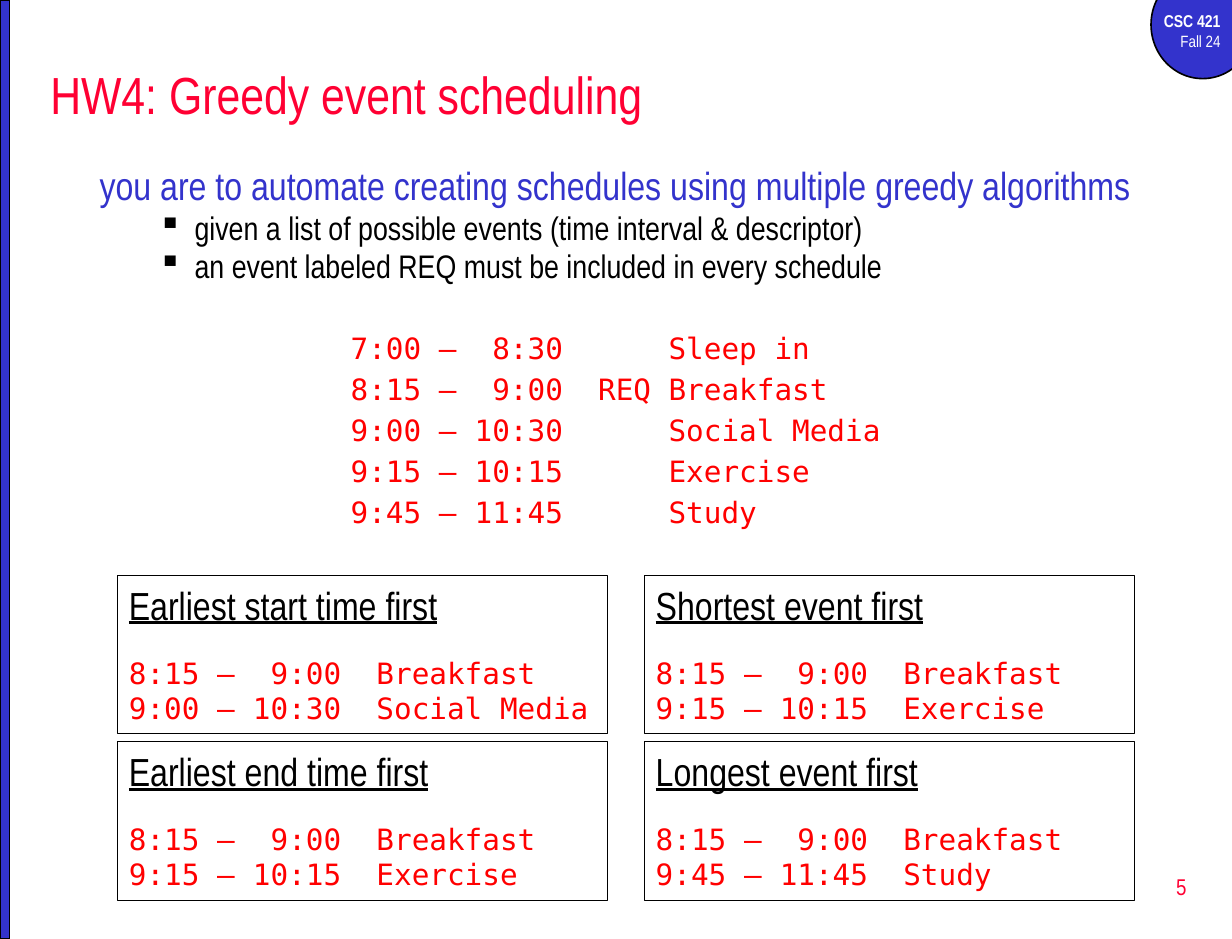
from lxml.etree import SubElement
from pptx import Presentation
from pptx.dml.color import RGBColor
from pptx.enum.shapes import MSO_SHAPE
from pptx.enum.text import MSO_ANCHOR, PP_ALIGN
from pptx.oxml.ns import qn
from pptx.util import Pt

PX = 9144  # 100 px to the inch
SANS, MONO = "Arial Narrow", "DejaVu Sans Mono"
BLUE, CRIMSON, RED, BLACK, WHITE = "3333CC", "FF0033", "FF0000", "000000", "FFFFFF"

# Tab stops that line up the columns of an event row
END, REQ, NAME = (181, "r"), (211, "l"), (271, "l")

EVENTS = [
    "7:00 –\t8:30\t\tSleep in",
    "8:15 –\t9:00\tREQ\tBreakfast",
    "9:00 –\t10:30\t\tSocial Media",
    "9:15 –\t10:15\t\tExercise",
    "9:45 –\t11:45\t\tStudy",
]
BREAKFAST = "8:15 –\t9:00\tBreakfast"
STRATEGIES = [
    ("Earliest start time first", "9:00 –\t10:30\tSocial Media"),
    ("Shortest event first", "9:15 –\t10:15\tExercise"),
    ("Earliest end time first", "9:15 –\t10:15\tExercise"),
    ("Longest event first", "9:45 –\t11:45\tStudy"),
]


def rgb(color):
    return RGBColor.from_string(color)


class Deck:
    def __init__(self, width, height):
        self.prs = Presentation()
        self.prs.slide_width, self.prs.slide_height = width * PX, height * PX
        self.s = self.prs.slides.add_slide(self.prs.slide_layouts[6])

    def shape(self, kind, x, y, w, h, fill=None, line=1):
        sp = self.s.shapes.add_shape(kind, x * PX, y * PX, w * PX, h * PX)
        sp.shadow.inherit = False
        if fill:
            sp.fill.solid()
            sp.fill.fore_color.rgb = rgb(fill)
        else:
            sp.fill.background()
        sp.line.color.rgb = rgb(BLACK)
        sp.line.width = Pt(line)
        return self.frame(sp, MSO_ANCHOR.TOP)

    def box(self, x, y, w, h, anchor=MSO_ANCHOR.TOP):
        sp = self.s.shapes.add_textbox(x * PX, y * PX, w * PX, h * PX)
        return self.frame(sp, anchor)

    def frame(self, sp, anchor):
        tf = sp.text_frame
        tf.word_wrap = True
        tf.vertical_anchor = anchor
        return tf

    def para(self, tf, text, size, color, font=SANS, bold=False, underline=False,
             align=PP_ALIGN.LEFT, before=0, spacing=1.0):
        """Fill the empty first paragraph, or add one after the last."""
        p = tf.paragraphs[0]
        if p.runs:
            p = tf.add_paragraph()
        p.alignment = align
        p.space_before = Pt(before)
        p.line_spacing = spacing
        r = p.add_run()
        r.text = text
        r.font.name, r.font.size = font, Pt(size)
        r.font.bold, r.font.underline = bold, underline
        r.font.color.rgb = rgb(color)
        return p

    def bullet(self, tf, text):
        p = self.para(tf, text, 20, BLACK, before=4, spacing=0.8)
        pPr = p._p.get_or_add_pPr()
        pPr.set("marL", str(81 * PX))
        pPr.set("indent", str(-31 * PX))
        SubElement(pPr, qn("a:buChar"), char="▪")

    def event(self, tf, text, stops, before=0):
        p = self.para(tf, text, 18, RED, MONO, before=before)
        tabs = SubElement(p._p.get_or_add_pPr(), qn("a:tabLst"))
        for pos, side in stops:
            SubElement(tabs, qn("a:tab"), pos=str(pos * PX), algn=side)

    def strategy(self, x, y, title, second):
        tf = self.shape(MSO_SHAPE.RECTANGLE, x, y, 418, 135, line=0.75)
        self.para(tf, title, 24, BLACK, underline=True)
        self.event(tf, BREAKFAST, [END, REQ], before=16.5)
        self.event(tf, second, [END, REQ])


def main():
    d = Deck(1050, 800)

    d.shape(MSO_SHAPE.OVAL, 981, -25, 88, 92, BLUE)
    course = d.box(967, 4, 83, 46)
    d.para(course, "CSC 421", 10.5, WHITE, bold=True, align=PP_ALIGN.RIGHT)
    d.para(course, "Fall 24", 10, WHITE, align=PP_ALIGN.RIGHT)
    d.shape(MSO_SHAPE.RECTANGLE, 0, 0, 8, 800, BLUE)

    title = d.box(33, 42, 992, 75, MSO_ANCHOR.MIDDLE)
    d.para(title, "HW4: Greedy event scheduling", 32, CRIMSON)

    body = d.box(75, 133, 952, 120)
    d.para(body, "you are to automate creating schedules using multiple greedy algorithms",
           24, BLUE)
    d.bullet(body, "given a list of possible events (time interval & descriptor)")
    d.bullet(body, "an event labeled REQ must be included in every schedule")

    schedule = d.box(289, 276, 600, 190)
    for i, text in enumerate(EVENTS):
        d.event(schedule, text, [END, REQ, NAME], before=3.6 if i else 0)

    for i, (name, second) in enumerate(STRATEGIES):
        row, col = divmod(i, 2)
        d.strategy(100 + 449 * col, 490 + 142 * row, name, second)

    number = d.box(802, 729, 219, 53, MSO_ANCHOR.MIDDLE)
    d.para(number, "5", 14, CRIMSON, align=PP_ALIGN.RIGHT)

    d.prs.save("out.pptx")


if __name__ == "__main__":
    main()
